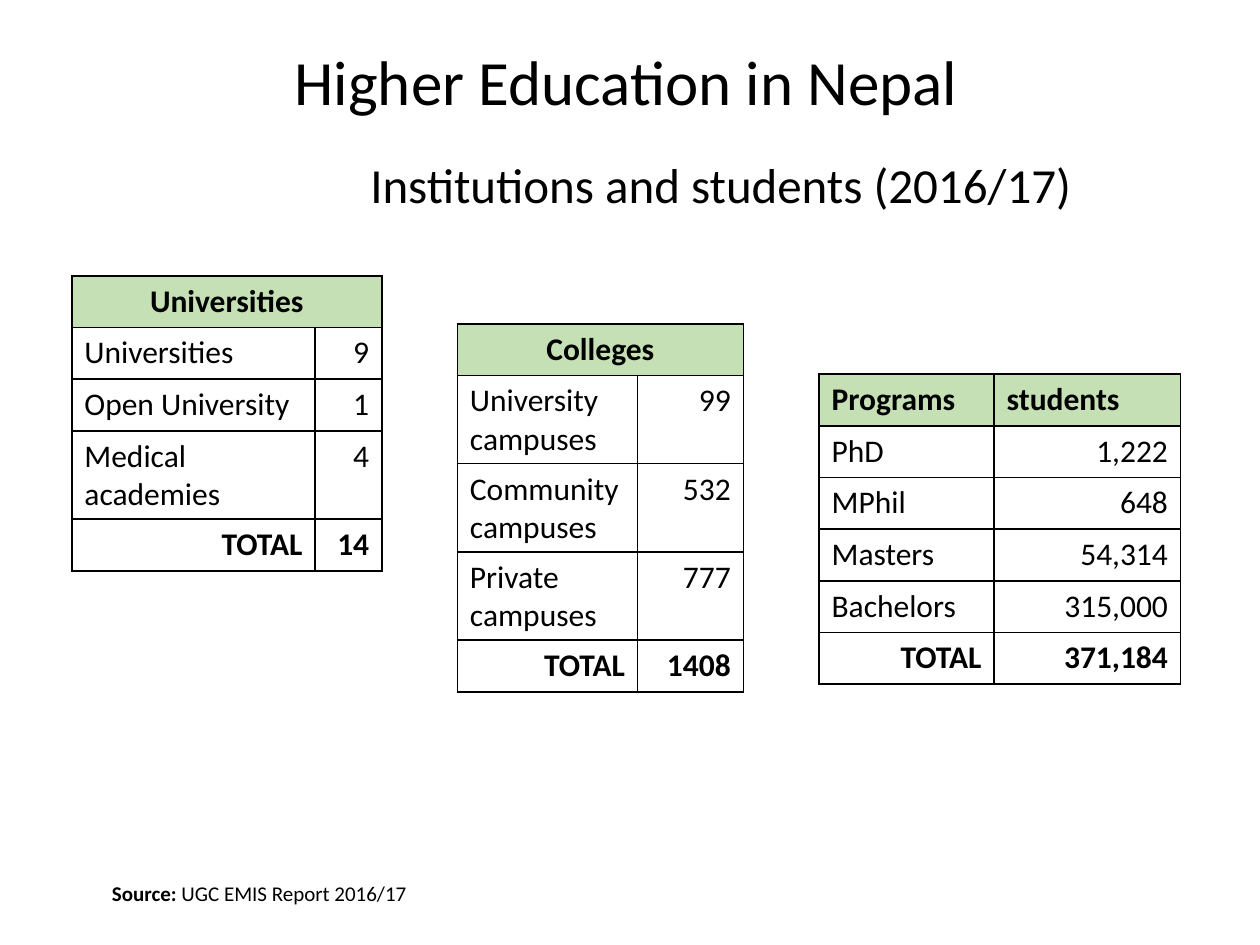
from lxml import etree
from pptx import Presentation
from pptx.dml.color import RGBColor
from pptx.enum import text
from pptx.oxml import ns
from pptx.util import Inches, Pt

FONT = "Calibri"
COLORS = {"ink": "000000", "header": "C5E0B4"}
ROW_H = 0.41

# position and size, wrap, size in points, runs of (text, bold)
TEXTS = [
    ((2.24, 0.29, 5.52, 0.71), True, 36, [("Higher Education in Nepal", False)]),
    ((2.84, 1.18, 5.88, 0.57), True, 28,
     [("Institutions and students (2016/17)", False)]),
    ((0.79, 6.94, 2.57, 0.3), False, 12,
     [("Source: ", True), ("UGC EMIS Report 2016/17", False)]),
]

# A one-item header spans both columns; the last row is the total.
TABLES = [
    {"at": (0.57, 2.19), "cols": (1.93, 0.53), "header": ["Universities"],
     "rows": [("Universities", "9"), ("Open University", "1"),
              ("Medical academies", "4"), ("TOTAL", "14")]},
    {"at": (3.63, 2.57), "cols": (1.43, 0.84), "header": ["Colleges"],
     "rows": [("University campuses", "99"), ("Community campuses", "532"),
              ("Private campuses", "777"), ("TOTAL", "1408")]},
    {"at": (6.5, 2.97), "cols": (1.39, 1.48), "header": ["Programs", "students"],
     "rows": [("PhD", "1,222"), ("MPhil", "648"), ("Masters", "54,314"),
              ("Bachelors", "315,000"), ("TOTAL", "371,184")]},
]


def add_run(p, words, size, bold):
    r = p.add_run()
    r.text = words
    r.font.name, r.font.size, r.font.bold = FONT, Pt(size), bold
    r.font.color.rgb = RGBColor.from_string(COLORS["ink"])


def add_text(slide, box, wrap, size, runs):
    tf = slide.shapes.add_textbox(*map(Inches, box)).text_frame
    tf.word_wrap = wrap
    tf.auto_size = text.MSO_AUTO_SIZE.SHAPE_TO_FIT_TEXT
    for words, bold in runs:
        add_run(tf.paragraphs[0], words, size, bold)


def style_cell(cell, fill=None):
    """Set the fill, then put the four borders ahead of it, as the schema asks."""
    if fill:
        cell.fill.solid()
        cell.fill.fore_color.rgb = RGBColor.from_string(fill)
    else:
        cell.fill.background()
    tc_pr = cell._tc.get_or_add_tcPr()
    for i, side in enumerate("LRTB"):
        ln = etree.Element(ns.qn(f"a:ln{side}"), w=str(Pt(1)))
        solid = etree.SubElement(ln, ns.qn("a:solidFill"))
        etree.SubElement(solid, ns.qn("a:srgbClr"), val=COLORS["ink"])
        tc_pr.insert(i, ln)


def fill_cell(cell, words, bold, align):
    p = cell.text_frame.paragraphs[0]
    p.alignment = align
    add_run(p, words, 18, bold)


def add_count_table(slide, at, cols, header, rows):
    n = len(rows) + 1
    frame = slide.shapes.add_table(n, 2, *map(Inches, (*at, sum(cols), n * ROW_H)))
    table = frame.table
    table.first_row = table.horz_banding = False
    for col, width in zip(table.columns, cols):
        col.width = Inches(width)
    for row in table.rows:
        row.height = Inches(ROW_H)
    for i in range(n):
        for j in range(2):
            style_cell(table.cell(i, j), COLORS["header"] if i == 0 else None)

    align = text.PP_ALIGN
    spans = len(header) == 1
    if spans:
        table.cell(0, 0).merge(table.cell(0, 1))
    for j, words in enumerate(header):
        fill_cell(table.cell(0, j), words, True, align.CENTER if spans else align.LEFT)
    for i, (label, count) in enumerate(rows, 1):
        total = i == len(rows)
        fill_cell(table.cell(i, 0), label, total, align.RIGHT if total else align.LEFT)
        fill_cell(table.cell(i, 1), count, total, align.RIGHT)


def main():
    prs = Presentation()
    prs.slide_width, prs.slide_height = Inches(10), Inches(7.5)
    slide = prs.slides.add_slide(prs.slide_layouts[6])
    for item in TEXTS:
        add_text(slide, *item)
    for item in TABLES:
        add_count_table(slide, **item)
    prs.save("out.pptx")


if __name__ == "__main__":
    main()
